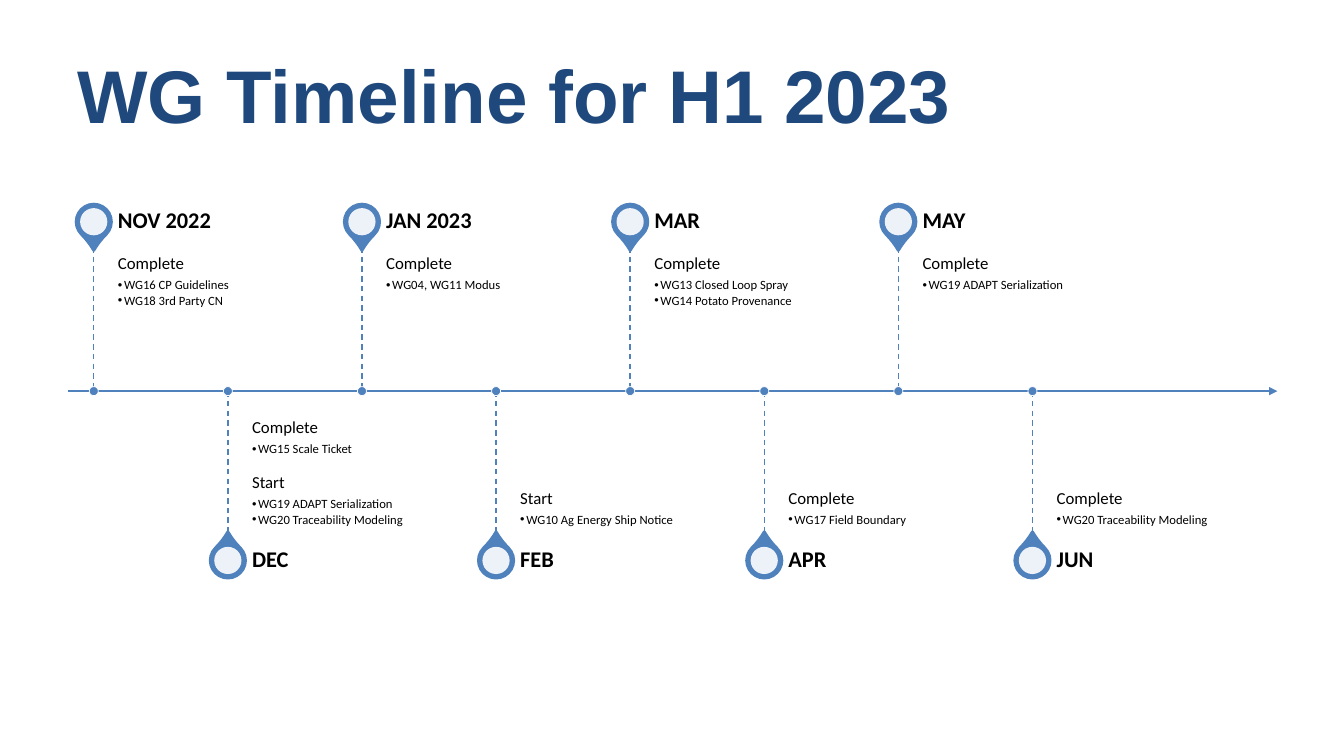
import dataclasses

import lxml.etree
import pptx
import pptx.dml.color
import pptx.enum.dml
import pptx.enum.shapes
import pptx.enum.text
import pptx.oxml.ns
import pptx.util

Inches = pptx.util.Inches
Pt = pptx.util.Pt
Shape = pptx.enum.shapes.MSO_SHAPE
Anchor = pptx.enum.text.MSO_ANCHOR
Dash = pptx.enum.dml.MSO_LINE


@dataclasses.dataclass(frozen=True)
class Theme:
    accent: str = "4F81BD"
    title_color: str = "1F497D"
    ink: str = "000000"
    paper: str = "FFFFFF"
    title_font: str = "Arial"
    body_font: str = "Calibri"
    title_size: float = 53.3
    month_size: float = 16
    status_size: float = 12
    item_size: float = 9


MILESTONES = [
    ("NOV 2022", [("Complete", ["WG16 CP Guidelines", "WG18 3rd Party CN"])]),
    ("DEC", [("Complete", ["WG15 Scale Ticket"]),
             ("Start", ["WG19 ADAPT Serialization", "WG20 Traceability Modeling"])]),
    ("JAN 2023", [("Complete", ["WG04, WG11 Modus"])]),
    ("FEB", [("Start", ["WG10 Ag Energy Ship Notice"])]),
    ("MAR", [("Complete", ["WG13 Closed Loop Spray", "WG14 Potato Provenance"])]),
    ("APR", [("Complete", ["WG17 Field Boundary"])]),
    ("MAY", [("Complete", ["WG19 ADAPT Serialization"])]),
    ("JUN", [("Complete", ["WG20 Traceability Modeling"])]),
]
FIRST_CENTER, PITCH = 0.93, 1.33
AXIS_LEFT, AXIS_RIGHT, AXIS_Y = 0.67, 12.67, 3.88
STEM, MONTH_HEIGHT, TEXT_WIDTH, TEXT_OFFSET = 1.43, 0.5, 2.18, 0.24
PIN, PIN_HOLE, DOT = 0.35, 0.27, 0.09
SECTION_GAP = 11.2


class TimelineSlide:
    """Draws timeline elements on one slide in one theme."""

    def __init__(self, slide, theme):
        self.slide = slide
        self.theme = theme

    def color(self, value):
        return pptx.dml.color.RGBColor.from_string(value)

    def add_xml(self, parent, tag, **attributes):
        return lxml.etree.SubElement(parent, pptx.oxml.ns.qn(tag), attributes)

    def text_box(self, left, top, width, height, anchor, insets):
        shape = self.slide.shapes.add_textbox(
            Inches(left), Inches(top), Inches(width), Inches(height))
        frame = shape.text_frame
        frame.word_wrap = True
        frame.vertical_anchor = anchor
        frame.margin_left, frame.margin_top, frame.margin_right, frame.margin_bottom = (
            Inches(inset) for inset in insets)
        return frame

    def paragraph(self, frame, text, size, font, color, bold=False, after=0, before=0):
        paragraph = frame.paragraphs[0]
        if paragraph.runs:
            paragraph = frame.add_paragraph()
        paragraph.line_spacing = 0.9
        paragraph.space_before = Pt(before)
        paragraph.space_after = Pt(after)
        run = paragraph.add_run()
        run.text = text
        run.font.size = Pt(size)
        run.font.name = font
        run.font.bold = bold
        run.font.color.rgb = self.color(color)
        return paragraph

    def title(self, text):
        theme = self.theme
        frame = self.text_box(0.67, 0.3, 12, 1.25, Anchor.MIDDLE, (0.1, 0.05, 0.1, 0.05))
        paragraph = self.paragraph(
            frame, text, theme.title_size, theme.title_font, theme.title_color, bold=True)
        paragraph.line_spacing = 1.0

    def bullet(self, frame, text):
        theme = self.theme
        paragraph = self.paragraph(
            frame, text, theme.item_size, theme.body_font, theme.ink,
            after=0.15 * theme.item_size)
        paragraph.level = 1
        properties = paragraph._p.get_or_add_pPr()
        properties.set("marL", str(Inches(0.06)))
        properties.set("indent", str(Inches(-0.06)))
        self.add_xml(properties, "a:buFont", typeface="Arial")
        self.add_xml(properties, "a:buChar", char="•")

    def line(self, start, end, width, dash=None, arrow=False):
        connector = self.slide.shapes.add_connector(
            pptx.enum.shapes.MSO_CONNECTOR.STRAIGHT,
            *(Inches(value) for value in (*start, *end)))
        connector.line.color.rgb = self.color(self.theme.accent)
        connector.line.width = Pt(width)
        if dash:
            connector.line.dash_style = dash
        if arrow:
            self.add_xml(connector.line._get_or_add_ln(), "a:tailEnd", type="triangle")
        self.add_xml(connector._element.spPr, "a:effectLst")

    def marker(self, kind, center, middle, size, fill, outline=None, width=0):
        shape = self.slide.shapes.add_shape(
            kind, Inches(center - size / 2), Inches(middle - size / 2),
            Inches(size), Inches(size))
        shape.shadow.inherit = False
        shape.fill.solid()
        shape.fill.fore_color.rgb = self.color(fill)
        if outline:
            shape.line.color.rgb = self.color(outline)
            shape.line.width = Pt(width)
        else:
            shape.line.fill.background()
        return shape

    def pin(self, center, middle, rotation):
        theme = self.theme
        drop = self.marker(Shape.TEAR, center, middle, PIN, theme.accent, theme.accent, 2)
        drop.adjustments[0] = 1.15
        drop.rotation = rotation
        hole = self.marker(Shape.OVAL, center, middle, PIN_HOLE, theme.paper)
        color = hole._element.spPr.find(".//" + pptx.oxml.ns.qn("a:srgbClr"))
        self.add_xml(color, "a:alpha", val="90000")

    def details(self, left, top, sections, above):
        theme = self.theme
        anchor, insets = ((Anchor.TOP, (0, 0.08, 0.08, 0.12)) if above
                          else (Anchor.BOTTOM, (0, 0.12, 0, 0.08)))
        frame = self.text_box(left, top, TEXT_WIDTH, STEM, anchor, insets)
        for index, (status, items) in enumerate(sections):
            self.paragraph(frame, status, theme.status_size, theme.body_font, theme.ink,
                           after=0.35 * theme.status_size,
                           before=SECTION_GAP if index else 0)
            for item in items:
                self.bullet(frame, item)

    def milestone(self, center, month, sections, above):
        theme = self.theme
        stem_top = AXIS_Y - STEM if above else AXIS_Y
        month_top = stem_top - MONTH_HEIGHT if above else stem_top + STEM
        pin_middle = month_top + MONTH_HEIGHT / 2
        left = center + TEXT_OFFSET
        self.pin(center, pin_middle, 135 if above else 315)
        self.details(left, stem_top, sections, above)
        frame = self.text_box(left, month_top, TEXT_WIDTH, MONTH_HEIGHT,
                              Anchor.MIDDLE, (0, 0, 0.11, 0))
        self.paragraph(frame, month, theme.month_size, theme.body_font, theme.ink,
                       bold=True, after=0.35 * theme.month_size)
        self.line((center, stem_top), (center, stem_top + STEM), 1, dash=Dash.DASH)
        self.marker(Shape.OVAL, center, AXIS_Y, DOT, theme.accent, theme.paper, 0.5)


def main():
    presentation = pptx.Presentation()
    presentation.slide_width = Inches(13.33)
    presentation.slide_height = Inches(7.5)
    slide = presentation.slides.add_slide(presentation.slide_layouts[6])
    timeline = TimelineSlide(slide, Theme())
    timeline.title("WG Timeline for H1 2023")
    timeline.line((AXIS_LEFT, AXIS_Y), (AXIS_RIGHT, AXIS_Y), 1.5, arrow=True)
    for index, (month, sections) in enumerate(MILESTONES):
        timeline.milestone(FIRST_CENTER + index * PITCH, month, sections, index % 2 == 0)
    presentation.save("out.pptx")


if __name__ == "__main__":
    main()
